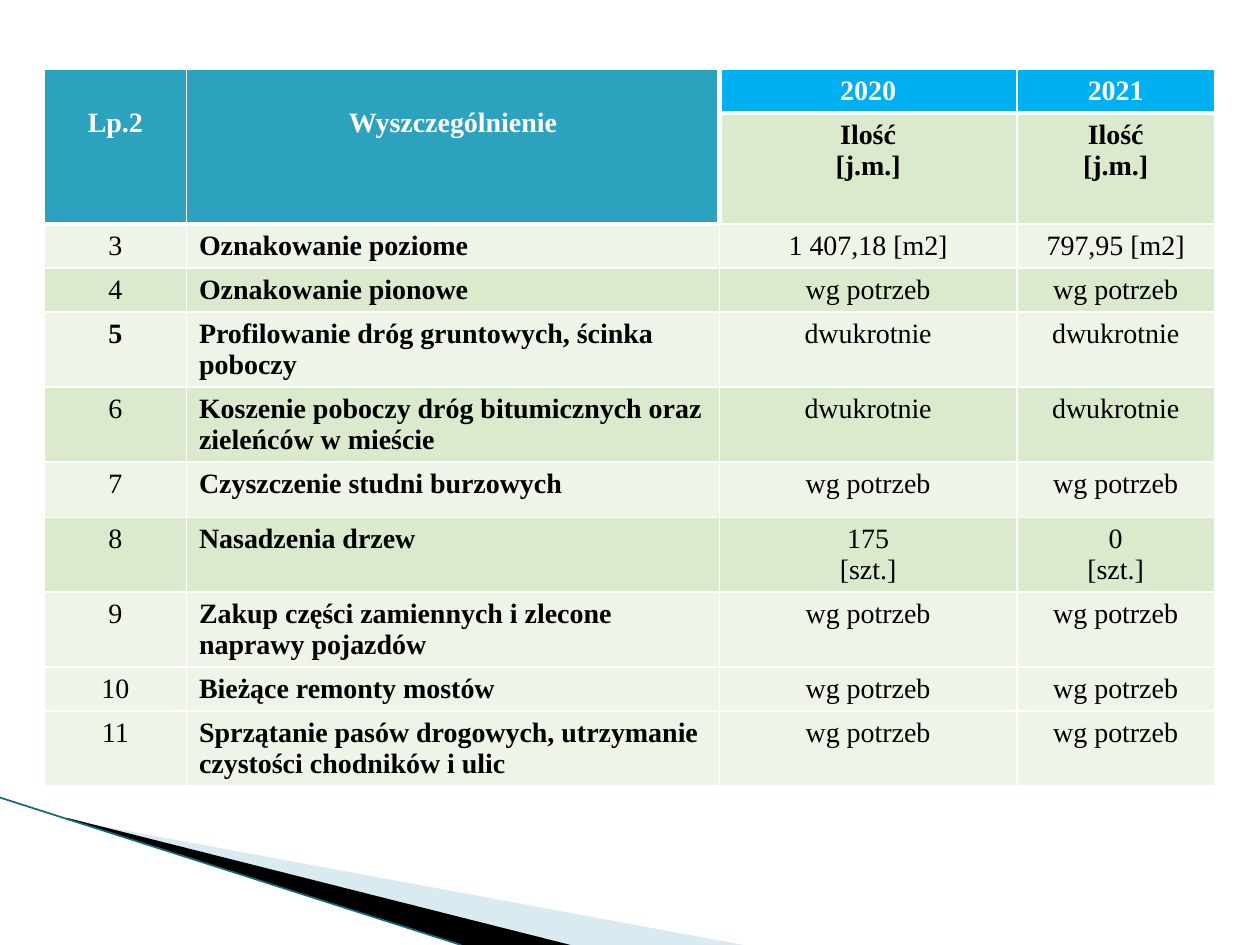
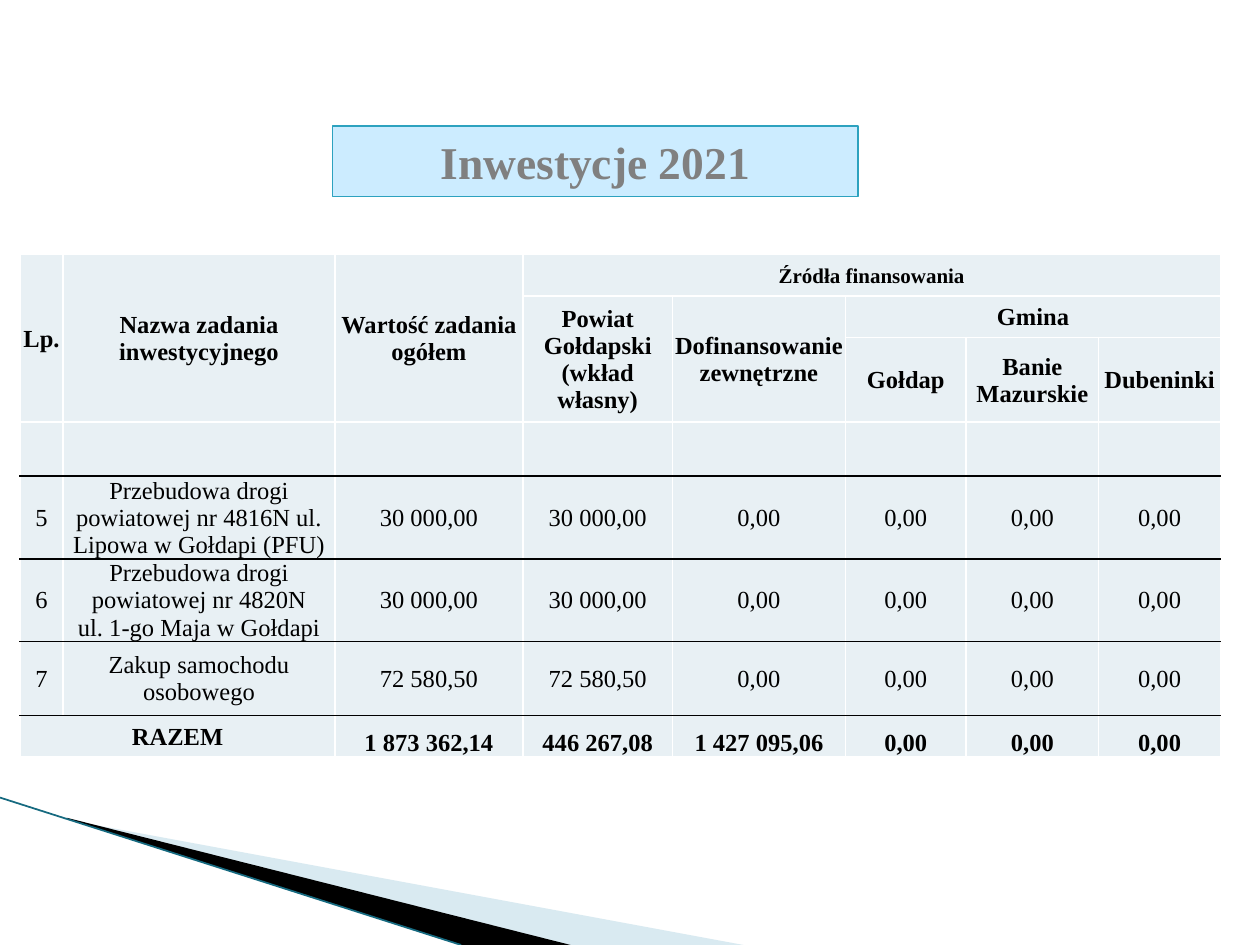
"""Build two slides on road maintenance and investments."""
from dataclasses import dataclass, replace
from typing import Optional

from pptx import Presentation
from pptx.dml.color import RGBColor
from pptx.enum.shapes import MSO_CONNECTOR, MSO_SHAPE
from pptx.enum.text import MSO_ANCHOR, PP_ALIGN
from pptx.oxml.ns import qn
from pptx.slide import Slide
from pptx.table import Table, _Cell
from pptx.text.text import TextFrame
from pptx.util import Inches, Pt
from lxml.etree import SubElement

FONT = "Times New Roman"
WHITE = RGBColor(0xFF, 0xFF, 0xFF)
BLACK = RGBColor(0, 0, 0)
GRAY = RGBColor(0x80, 0x80, 0x80)
TEAL = RGBColor(0x2D, 0xA2, 0xBF)
DARK_TEAL = RGBColor(0x16, 0x6A, 0x80)
SKY = RGBColor(0x00, 0xB0, 0xF0)
PALE_SKY = RGBColor(0xCC, 0xEC, 0xFF)
WEDGE_BLUE = RGBColor(0xA0, 0xCB, 0xDC)
GREEN = RGBColor(0xDB, 0xE9, 0xCD)
PALE_GREEN = RGBColor(0xEE, 0xF4, 0xE8)
PALE_BLUE = RGBColor(0xE8, 0xF0, 0xF4)


@dataclass(frozen=True)
class Edge:
    """Colour and width in points of one cell border."""
    color: RGBColor = WHITE
    width: float = 1


THIN, THICK, RULE = Edge(), Edge(width=3), Edge(BLACK)


@dataclass(frozen=True)
class TextStyle:
    """Look of a run and its paragraph."""
    size: float
    bold: bool = False
    color: RGBColor = BLACK
    align: PP_ALIGN = PP_ALIGN.CENTER


@dataclass(frozen=True)
class CellStyle:
    """Fill, text, margins (left, top, right, bottom) and borders of a cell."""
    fill: RGBColor
    text: TextStyle
    margins: tuple[float, float, float, float]
    anchor: MSO_ANCHOR = MSO_ANCHOR.TOP
    left: Edge = THIN
    right: Edge = THIN
    top: Edge = THIN
    bottom: Edge = THIN


@dataclass(frozen=True)
class HeaderCell:
    """Header text with its place and span in the grid."""
    text: str
    row: int
    col: int
    rows: int = 1
    cols: int = 1
    style: Optional[CellStyle] = None


@dataclass(frozen=True)
class Wedge:
    """Filled corner outline."""
    points: tuple[tuple[float, float], ...]
    color: RGBColor
    opacity: int = 100


WEDGES = (
    Wedge(((0.55, 6.51), (5.9, 7.5), (4.52, 7.5), (0.55, 6.5)), WEDGE_BLUE, 40),
    Wedge(((0.53, 6.49), (4.53, 7.5), (3.66, 7.5), (0.54, 6.5)), BLACK),
)

WORK_TEXT = TextStyle(16)
WORK_BOLD = replace(WORK_TEXT, bold=True)
WORK_NAME = replace(WORK_BOLD, align=PP_ALIGN.LEFT)
WORK_BODY = CellStyle(PALE_GREEN, WORK_TEXT, (0.1, 0.05, 0.1, 0.05))
YEAR = replace(WORK_BODY, fill=SKY, text=replace(WORK_BOLD, color=WHITE), bottom=THICK)
WORK_HEAD = replace(YEAR, fill=TEAL, margins=(0.1, 0.3, 0.1, 0.05))
QUANTITY = replace(WORK_BODY, fill=GREEN, text=WORK_BOLD, top=THICK)
WORK_COLUMNS = (1.13, 4.23, 2.36, 1.57)
WORK_HEIGHTS = (0.34, 0.88, 0.35, 0.35, 0.59, 0.59, 0.44, 0.59, 0.59, 0.35, 0.59)
WORK_HEADERS = (
    HeaderCell("Lp.2", 0, 0, rows=2, style=WORK_HEAD),
    HeaderCell("Wyszczególnienie", 0, 1, rows=2, style=replace(WORK_HEAD, right=THICK)),
    HeaderCell("2020", 0, 2, style=YEAR),
    HeaderCell("2021", 0, 3, style=YEAR),
    HeaderCell("Ilość\n[j.m.]", 1, 2, style=replace(QUANTITY, left=THICK)),
    HeaderCell("Ilość\n[j.m.]", 1, 3, style=QUANTITY),
)
AS_NEEDED = ("wg potrzeb", "wg potrzeb")
TWICE = ("dwukrotnie", "dwukrotnie")
WORKS = (
    ("Oznakowanie poziome", "1 407,18 [m2]", "797,95 [m2]"),
    ("Oznakowanie pionowe", *AS_NEEDED),
    ("Profilowanie dróg gruntowych, ścinka poboczy", *TWICE),
    ("Koszenie poboczy dróg bitumicznych oraz zieleńców w mieście", *TWICE),
    ("Czyszczenie studni burzowych", *AS_NEEDED),
    ("Nasadzenia drzew", "175\n[szt.]", "0\n[szt.]"),
    ("Zakup części zamiennych i zlecone naprawy pojazdów", *AS_NEEDED),
    ("Bieżące remonty mostów", *AS_NEEDED),
    ("Sprzątanie pasów drogowych, utrzymanie czystości chodników i ulic", *AS_NEEDED),
)
FIRST_WORK = 3
GREEN_WORKS = (4, 6, 8)
BOLD_WORK = 5

TASK_TEXT = TextStyle(14)
TASK_BODY = CellStyle(PALE_BLUE, TASK_TEXT, (0, 0.01, 0, 0), MSO_ANCHOR.MIDDLE,
                      top=RULE, bottom=RULE)
TASK_HEAD = replace(TASK_BODY, text=replace(TASK_TEXT, bold=True), top=THIN, bottom=THIN)
SOURCES_HEAD = replace(TASK_HEAD, text=replace(TASK_HEAD.text, size=12))
TASK_GAP = replace(TASK_BODY, top=THIN)
TOTAL_LABEL = replace(TASK_HEAD, top=RULE)
TOTAL = replace(TOTAL_LABEL, anchor=MSO_ANCHOR.BOTTOM)
TASK_COLUMNS = (0.34, 2.16, 1.49, 1.19, 1.37, 0.96, 1.05, 0.97)
TASK_HEIGHTS = (0.33, 0.33, 0.67, 0.43, 0.65, 0.65, 0.59, 0.33)
TASK_HEADERS = (
    HeaderCell("Lp.", 0, 0, rows=3),
    HeaderCell("Nazwa zadania inwestycyjnego", 0, 1, rows=3),
    HeaderCell("Wartość zadania ogółem", 0, 2, rows=3),
    HeaderCell("Źródła finansowania", 0, 3, cols=5, style=SOURCES_HEAD),
    HeaderCell("Powiat Gołdapski (wkład własny)", 1, 3, rows=2),
    HeaderCell("Dofinansowanie zewnętrzne", 1, 4, rows=2),
    HeaderCell("Gmina", 1, 5, cols=3),
    HeaderCell("Gołdap", 2, 5),
    HeaderCell("Banie Mazurskie", 2, 6),
    HeaderCell("Dubeninki", 2, 7),
    HeaderCell("RAZEM", 7, 0, cols=2, style=TOTAL_LABEL),
)
TASKS = (
    ("Przebudowa drogi powiatowej nr 4816N ul. Lipowa w Gołdapi (PFU)", "30 000,00"),
    ("Przebudowa drogi powiatowej nr 4820N\nul. 1-go Maja w Gołdapi", "30 000,00"),
    ("Zakup samochodu osobowego", "72 580,50"),
)
FIRST_TASK = 5
ZERO = "0,00"
TOTALS = ("1 873 362,14", "446 267,08", "1 427 095,06", ZERO, ZERO, ZERO)


def write_text(frame: TextFrame, text: str, style: TextStyle) -> None:
    """Write each line of text as a paragraph."""
    for index, line in enumerate(text.split("\n")):
        paragraph = frame.add_paragraph() if index else frame.paragraphs[0]
        paragraph.alignment = style.align
        run = paragraph.add_run()
        run.text = line
        run.font.name = FONT
        run.font.size = Pt(style.size)
        run.font.bold = style.bold
        run.font.color.rgb = style.color


def style_cell(cell: _Cell, style: CellStyle) -> None:
    """Apply borders, fill, margins and anchor to a cell."""
    properties = cell._tc.get_or_add_tcPr()
    edges = {"L": style.left, "R": style.right, "T": style.top, "B": style.bottom}
    for side, edge in edges.items():
        border = SubElement(properties, qn(f"a:ln{side}"), w=str(Pt(edge.width)))
        solid = SubElement(border, qn("a:solidFill"))
        SubElement(solid, qn("a:srgbClr"), val=str(edge.color))
    cell.fill.solid()
    cell.fill.fore_color.rgb = style.fill
    cell.margin_left, cell.margin_top, cell.margin_right, cell.margin_bottom = map(
        Inches, style.margins)
    cell.vertical_anchor = style.anchor


def fill_cell(cell: _Cell, text: str, style: CellStyle) -> None:
    """Style a cell and write its text."""
    style_cell(cell, style)
    write_text(cell.text_frame, text, style.text)


def fill_headers(table: Table, headers: tuple[HeaderCell, ...], default: CellStyle) -> None:
    """Merge, style and fill the header cells."""
    for header in headers:
        style = header.style or default
        last_row, last_col = header.row + header.rows - 1, header.col + header.cols - 1
        for row in range(header.row, last_row + 1):
            for col in range(header.col, last_col + 1):
                style_cell(table.cell(row, col), style)
        start = table.cell(header.row, header.col)
        if header.rows * header.cols > 1:
            start.merge(table.cell(last_row, last_col))
        write_text(start.text_frame, header.text, style.text)


def add_grid(slide: Slide, left: float, top: float, columns: tuple[float, ...],
             heights: tuple[float, ...]) -> Table:
    """Add an unstyled table with the given column widths and row heights."""
    table = slide.shapes.add_table(
        len(heights), len(columns), Inches(left), Inches(top),
        Inches(sum(columns)), Inches(sum(heights))).table
    table.first_row = table.horz_banding = False
    for column, width in zip(table.columns, columns):
        column.width = Inches(width)
    for row, height in zip(table.rows, heights):
        row.height = Inches(height)
    return table


def draw_corner(slide: Slide) -> None:
    """Draw the wedges and the line in the lower left corner."""
    for wedge in WEDGES:
        start, *others = [(Inches(x), Inches(y)) for x, y in wedge.points]
        builder = slide.shapes.build_freeform(*start)
        builder.add_line_segments(others, close=True)
        outline = builder.convert_to_shape()
        outline.shadow.inherit = False
        outline.fill.solid()
        outline.fill.fore_color.rgb = wedge.color
        outline.line.fill.background()
        if wedge.opacity < 100:
            color = outline._element.spPr.find(qn("a:solidFill"))[0]
            SubElement(color, qn("a:alpha"), val=str(wedge.opacity * 1000))
    edge = slide.shapes.add_connector(
        MSO_CONNECTOR.STRAIGHT, 0, Inches(6.33), Inches(3.66), Inches(7.5))
    edge.line.color.rgb = DARK_TEAL
    edge.line.width = Pt(1)
    SubElement(edge._element.spPr, qn("a:effectLst"))


def build_maintenance(slide: Slide) -> None:
    """Build the table of road works in 2020 and 2021."""
    draw_corner(slide)
    table = add_grid(slide, 0.35, 0.55, WORK_COLUMNS, WORK_HEIGHTS)
    fill_headers(table, WORK_HEADERS, WORK_HEAD)
    for row, (name, *amounts) in enumerate(WORKS, start=2):
        number = row - 2 + FIRST_WORK
        body = replace(WORK_BODY, fill=GREEN if number in GREEN_WORKS else PALE_GREEN)
        number_text = WORK_BOLD if number == BOLD_WORK else WORK_TEXT
        texts = (number_text, WORK_NAME, WORK_TEXT, WORK_TEXT)
        for col, (value, text) in enumerate(zip((str(number), name, *amounts), texts)):
            top = THICK if row == 2 and col < 2 else THIN
            fill_cell(table.cell(row, col), value, replace(body, text=text, top=top))


def build_investments(slide: Slide) -> None:
    """Build the titled table of investments in 2021."""
    draw_corner(slide)
    table = add_grid(slide, 0.16, 2.02, TASK_COLUMNS, TASK_HEIGHTS)
    fill_headers(table, TASK_HEADERS, TASK_HEAD)
    for col in range(len(TASK_COLUMNS)):
        style_cell(table.cell(3, col), TASK_GAP)
    for index, (name, value) in enumerate(TASKS):
        values = (str(FIRST_TASK + index), name, value, value, *[ZERO] * 4)
        for col, text in enumerate(values):
            fill_cell(table.cell(4 + index, col), text, TASK_BODY)
    for col, total in enumerate(TOTALS, start=2):
        fill_cell(table.cell(7, col), total, TOTAL)

    title = slide.shapes.add_shape(
        MSO_SHAPE.RECTANGLE, Inches(2.64), Inches(1), Inches(4.17), Inches(0.56))
    title.shadow.inherit = False
    title.fill.solid()
    title.fill.fore_color.rgb = PALE_SKY
    title.line.color.rgb = TEAL
    title.line.width = Pt(0.75)
    title.text_frame.vertical_anchor = MSO_ANCHOR.MIDDLE
    write_text(title.text_frame, "Inwestycje 2021", TextStyle(26, True, GRAY))


def main() -> None:
    """Build and save the presentation."""
    presentation = Presentation()
    presentation.slide_width, presentation.slide_height = Inches(10), Inches(7.5)
    for build in (build_maintenance, build_investments):
        build(presentation.slides.add_slide(presentation.slide_layouts[6]))
    presentation.save("out.pptx")


if __name__ == "__main__":
    main()
